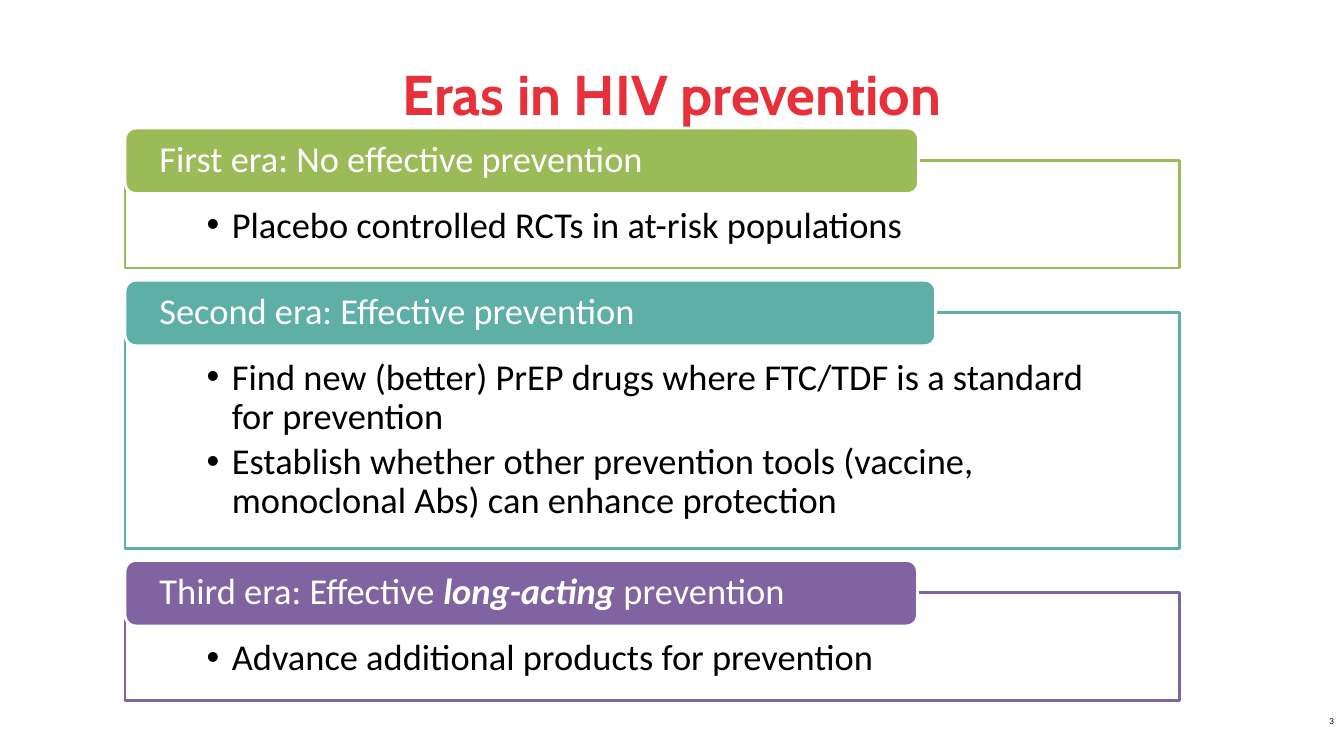
from lxml import etree
from pptx import Presentation
from pptx.dml.color import RGBColor
from pptx.enum.shapes import MSO_SHAPE
from pptx.enum.text import MSO_ANCHOR, PP_ALIGN
from pptx.oxml.ns import qn
from pptx.util import Inches, Pt

RECTANGLE, ROUNDED = MSO_SHAPE.RECTANGLE, MSO_SHAPE.ROUNDED_RECTANGLE
TOP, MIDDLE = MSO_ANCHOR.TOP, MSO_ANCHOR.MIDDLE
LEFT, CENTER, RIGHT = PP_ALIGN.LEFT, PP_ALIGN.CENTER, PP_ALIGN.RIGHT

WHITE = RGBColor(0xFF, 0xFF, 0xFF)
BLACK = RGBColor(0, 0, 0)
RED = RGBColor(0xE8, 0x30, 0x3B)
GREEN = RGBColor(0x9B, 0xBB, 0x59)
TEAL = RGBColor(0x5E, 0xAF, 0xA6)
PURPLE = RGBColor(0x80, 0x64, 0xA2)

ERA_LEFT, ERA_WIDTH, FIRST_ERA_TOP = 1.24, 10.46, 1.27
TAB_HEIGHT, TAB_RISE, ERA_GAP = 0.65, 0.32, 0.12

ERAS = [
    (GREEN, 7.87, 1.07, [("First era: No effective prevention", False)],
     ["Placebo controlled RCTs in at-risk populations"]),
    (TEAL, 8.04, 2.34, [("Second era: Effective prevention", False)],
     ["Find new (better) PrEP drugs where FTC/TDF is a standard for prevention",
      "Establish whether other prevention tools (vaccine, monoclonal Abs) can enhance protection"]),
    (PURPLE, 7.86, 1.07,
     [("Third era: Effective ", False), ("long-acting", True), (" prevention", False)],
     ["Advance additional products for prevention"]),
]


def add_bullet(para):
    properties = para._p.get_or_add_pPr()
    properties.set("marL", str(Inches(0.25)))
    properties.set("indent", str(Inches(-0.25)))
    etree.SubElement(properties, qn("a:buFont")).set("typeface", "Arial")
    etree.SubElement(properties, qn("a:buChar")).set("char", "•")


def write_text(shape, paragraphs, size, color, font="Calibri", align=LEFT, anchor=MIDDLE,
               margins=(0.1, 0.05, 0.1, 0.05), bold=False, bullets=False, line_spacing=None,
               space_after=0):
    frame = shape.text_frame
    frame.word_wrap = True
    frame.vertical_anchor = anchor
    (frame.margin_left, frame.margin_top,
     frame.margin_right, frame.margin_bottom) = map(Inches, margins)
    for index, spans in enumerate(paragraphs):
        para = frame.add_paragraph() if index else frame.paragraphs[0]
        if bullets:
            add_bullet(para)
        para.alignment = align
        para.line_spacing = line_spacing
        para.space_after = Pt(space_after)
        for text, emphasis in spans:
            span = para.add_run()
            span.text = text
            span.font.name = font
            span.font.size = Pt(size)
            span.font.color.rgb = color
            span.font.bold = bold or emphasis
            span.font.italic = emphasis


def add_text(page, text, left, top, width, height, **style):
    box = page.shapes.add_textbox(Inches(left), Inches(top), Inches(width), Inches(height))
    write_text(box, [[(text, False)]], **style)


def add_panel(page, kind, left, top, width, height, fill, line):
    panel = page.shapes.add_shape(kind, Inches(left), Inches(top), Inches(width), Inches(height))
    panel.shadow.inherit = False
    panel.fill.solid()
    panel.fill.fore_color.rgb = fill
    panel.line.color.rgb = line
    panel.line.width = Pt(2)
    return panel


def add_era(page, left, top, width, color, tab_width, height, heading, points):
    frame_top = top + TAB_RISE
    body = add_panel(page, RECTANGLE, left, frame_top, width, height, WHITE, color)
    write_text(body, [[(point, False)] for point in points], size=26, color=BLACK, anchor=TOP,
               margins=(0.81, 0.46, 0.81, 0.2), bullets=True, line_spacing=0.9, space_after=4)
    tab = add_panel(page, ROUNDED, left, top, tab_width, TAB_HEIGHT, color, WHITE)
    write_text(tab, [heading], size=26, color=WHITE, margins=(0.31, 0, 0.31, 0),
               line_spacing=0.9)
    return frame_top + height


def main():
    deck = Presentation()
    deck.slide_width, deck.slide_height = Inches(13.33), Inches(7.5)
    page = deck.slides.add_slide(deck.slide_layouts[6])
    add_text(page, "Eras in HIV prevention", 0.82, 0.3, 11.69, 1.25,
             size=40, color=RED, font="Cabin", align=CENTER, bold=True)
    add_text(page, "3", 10.22, 6.95, 3.11, 0.4, size=6, color=BLACK, font="Arial", align=RIGHT)
    top = FIRST_ERA_TOP
    for era in ERAS:
        top = add_era(page, ERA_LEFT, top, ERA_WIDTH, *era) + ERA_GAP
    deck.save("out.pptx")


if __name__ == "__main__":
    main()
